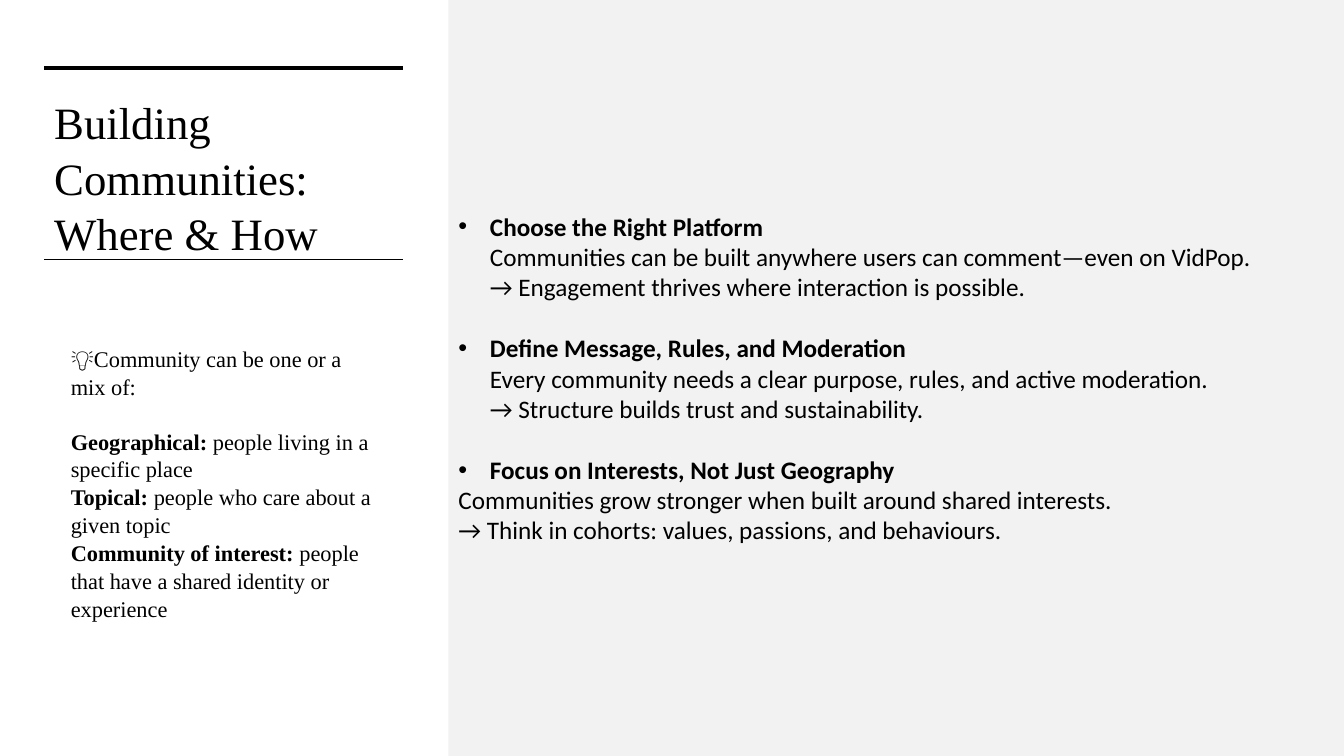
from copy import deepcopy

from pptx import Presentation
from pptx.dml.color import RGBColor
from pptx.enum.shapes import MSO_CONNECTOR
from pptx.enum.text import MSO_ANCHOR, MSO_AUTO_SIZE, PP_ALIGN
from pptx.oxml.ns import qn
from pptx.util import Pt

PX = 9525
STRAIGHT = MSO_CONNECTOR.STRAIGHT
TOP, MIDDLE = MSO_ANCHOR.TOP, MSO_ANCHOR.MIDDLE
FIT, NO_FIT = MSO_AUTO_SIZE.SHAPE_TO_FIT_TEXT, MSO_AUTO_SIZE.NONE
LEFT = PP_ALIGN.LEFT
SERIF, SANS = "Times New Roman", "Calibri"
BLACK, PANEL = "000000", "F2F2F2"

POINTS = [
    ("Choose the Right Platform",
     "\vCommunities can be built anywhere users can comment—even on VidPop."
     "\v→ Engagement thrives where interaction is possible."),
    ("Define Message, Rules, and Moderation",
     "\vEvery community needs a clear purpose, rules, and active moderation."
     "\v→ Structure builds trust and sustainability."),
    ("Focus on Interests, Not Just Geography", ""),
    ("", "Communities grow stronger when built around shared interests."
     "\v→ Think in cohorts: values, passions, and behaviours."),
]
KINDS = [
    ("", "💡Community can be one or a mix of:"),
    ("Geographical: ", "people living in a specific place"),
    ("Topical: ", "people who care about a given topic"),
    ("Community of interest: ",
     "people that have a shared identity or experience"),
]


def rgb(value):
    """Return the colour for a hex string."""
    return RGBColor.from_string(value)


class Slide:
    """Draws styled elements on one slide."""

    def __init__(self, prs):
        """Add a title and content slide."""
        self.s = prs.slides.add_slide(prs.slide_layouts[1])

    def place(self, sp, left, top, width, height):
        """Move and size a shape in px."""
        sp.left, sp.top = left * PX, top * PX
        sp.width, sp.height = width * PX, height * PX

    def fill_text(self, tf, items, font, size, spacing, gaps, fit, anchor):
        """Set paragraphs that each have a bold lead and a plain tail."""
        tf.word_wrap, tf.auto_size, tf.vertical_anchor = True, fit, anchor
        for i, (lead, tail) in enumerate(items):
            p = tf.paragraphs[0] if i == 0 else tf.add_paragraph()
            p.alignment, p.line_spacing = LEFT, spacing
            p.space_before, p.space_after = Pt(0), Pt(gaps.get(i, 0))
            p.text = lead
            for n, line in enumerate(tail.split("\v")):
                if n:
                    p.add_line_break()
                if line:
                    p.add_run().text = line
            for r in p.runs:
                r.font.name, r.font.size = font, Pt(size)
                r.font.bold = r.text == lead
                r.font.color.rgb = rgb(BLACK)
            for br in p._p.findall(qn("a:br")):
                br.append(deepcopy(p.runs[0]._r.rPr))

    def title(self, box, text):
        """Fill the title placeholder."""
        sp = self.s.shapes.title
        self.place(sp, *box)
        self.fill_text(sp.text_frame, [("", text)], SERIF, 32, 1.04, {}, FIT, TOP)

    def points(self, box, items):
        """Fill the body placeholder as a shaded panel of bullets."""
        sp = self.s.placeholders[1]
        self.place(sp, *box)
        sp.fill.solid()
        sp.fill.fore_color.rgb = rgb(PANEL)
        tf = sp.text_frame
        self.fill_text(tf, items, SANS, 18, 1.0, {0: 22, 1: 22}, NO_FIT, MIDDLE)
        for p, (lead, _) in zip(tf.paragraphs, items):
            indent = 30 * PX if lead else 0
            pPr = p._p.get_or_add_pPr()
            pPr.set("marL", str(indent))
            pPr.set("indent", str(-indent))
            if lead:
                bullet_font = pPr.makeelement(qn("a:buFont"), {"typeface": "Arial"})
                bullet = pPr.makeelement(qn("a:buChar"), {"char": "•"})
                pPr.extend([bullet_font, bullet])
            else:
                pPr.append(pPr.makeelement(qn("a:buNone"), {}))

    def note(self, box, items):
        """Add a text box of labelled definitions."""
        sp = self.s.shapes.add_textbox(*(v * PX for v in box))
        self.fill_text(sp.text_frame, items, SERIF, 16, 1.04, {0: 19}, FIT, TOP)

    def rule(self, left, right, y, weight):
        """Add a horizontal line."""
        line = self.s.shapes.add_connector(
            STRAIGHT, left * PX, y * PX, right * PX, y * PX)
        line.line.color.rgb = rgb(BLACK)
        line.line.width = Pt(weight)
        spPr = line._element.spPr
        spPr.append(spPr.makeelement(qn("a:effectLst"), {}))


def main():
    """Build and save the slide."""
    prs = Presentation()
    prs.slide_width, prs.slide_height = 1280 * PX, 720 * PX
    slide = Slide(prs)
    slide.points((427, 0, 853, 720), POINTS)
    for y, weight in ((65, 3), (247, 1)):
        slide.rule(42, 384, y, weight)
    slide.title((42, 83, 300, 165), "Building Communities: Where & How")
    slide.note((58, 323, 309, 272), KINDS)
    prs.save("out.pptx")


if __name__ == "__main__":
    main()
